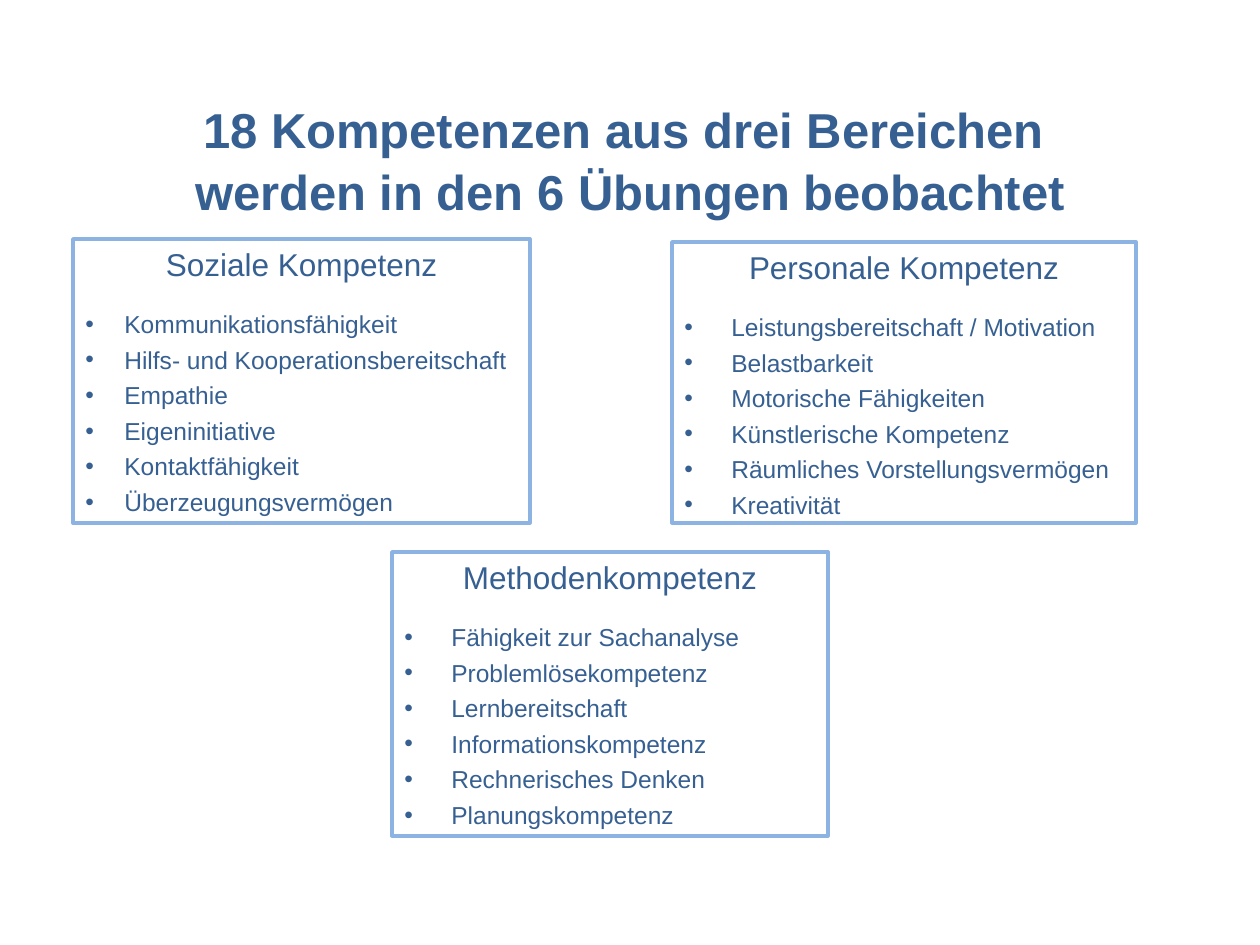
from lxml.etree import SubElement
from pptx import Presentation
from pptx.dml.color import RGBColor
from pptx.enum.shapes import MSO_SHAPE
from pptx.enum.text import MSO_ANCHOR, PP_ALIGN
from pptx.oxml.ns import qn
from pptx.util import Emu, Pt

PX = 914400 // 126
NAVY = RGBColor(0x37, 0x60, 0x92)
SKY = RGBColor(0x8D, 0xB3, 0xE2)
WHITE = RGBColor(0xFF, 0xFF, 0xFF)

TITLE = ["18 Kompetenzen aus drei Bereichen ", "werden in den 6 Übungen beobachtet"]
CARDS = [
    ("Soziale Kompetenz", (73, 239, 457, 284), 39, [
        "Kommunikationsfähigkeit", "Hilfs- und Kooperationsbereitschaft", "Empathie",
        "Eigeninitiative", "Kontaktfähigkeit", "Überzeugungsvermögen"]),
    ("Methodenkompetenz", (392, 552, 436, 284), 47, [
        "Fähigkeit zur Sachanalyse", "Problemlösekompetenz", "Lernbereitschaft",
        "Informationskompetenz", "Rechnerisches Denken", "Planungskompetenz"]),
    ("Personale Kompetenz", (672, 242, 464, 281), 47, [
        "Leistungsbereitschaft / Motivation", "Belastbarkeit", "Motorische Fähigkeiten",
        "Künstlerische Kompetenz", "Räumliches Vorstellungsvermögen", "Kreativität"]),
]


def px(length):
    """Turn whole pixels into EMU."""
    return Emu(length * PX)


def write(frame, text, size, first=False, bold=False, align=PP_ALIGN.LEFT, before=0, indent=0):
    """Add one paragraph to a text frame, with a bullet when indented."""
    para = frame.paragraphs[0] if first else frame.add_paragraph()
    para.alignment = align
    para.space_before = Pt(before)
    if indent:
        properties = para._p.get_or_add_pPr()
        properties.set("marL", str(px(indent)))
        properties.set("indent", str(-px(indent)))
        SubElement(properties, qn("a:buFont")).set("typeface", "Arial")
        SubElement(properties, qn("a:buChar")).set("char", "•")
    span = para.add_run()
    span.text = text
    span.font.name = "Arial"
    span.font.size = Pt(size)
    span.font.bold = bold
    span.font.color.rgb = NAVY


class Page:
    """Holds the current slide and draws its elements in one style."""

    def __init__(self, deck):
        """Add a blank slide to the deck."""
        self.shapes = deck.slides.add_slide(deck.slide_layouts[6]).shapes

    def title(self, lines, bounds):
        """Draw the centred bold title."""
        frame = self.shapes.add_textbox(*map(px, bounds)).text_frame
        frame.word_wrap = True
        frame.vertical_anchor = MSO_ANCHOR.MIDDLE
        frame.margin_top = px(14)
        for index, line in enumerate(lines):
            write(frame, line, 28, first=index == 0, bold=True,
                  align=PP_ALIGN.CENTER, before=1.5 * index)

    def card(self, heading, bounds, indent, items):
        """Draw a framed box with a heading and bulleted items."""
        box = self.shapes.add_shape(MSO_SHAPE.RECTANGLE, *map(px, bounds))
        box.shadow.inherit = False
        box.fill.solid()
        box.fill.fore_color.rgb = WHITE
        box.line.color.rgb = SKY
        box.line.width = Pt(2)
        frame = box.text_frame
        frame.word_wrap = True
        frame.vertical_anchor = MSO_ANCHOR.TOP
        write(frame, heading, 18, first=True, align=PP_ALIGN.CENTER)
        for index, item in enumerate(items):
            write(frame, item, 14, before=3.5 if index else 15, indent=indent)


def main():
    """Build and save the slide."""
    deck = Presentation()
    deck.slide_width, deck.slide_height = px(1260), px(945)
    page = Page(deck)
    page.title(TITLE, (63, 77, 1134, 158))
    for card in CARDS:
        page.card(*card)
    deck.save("out.pptx")


if __name__ == "__main__":
    main()
